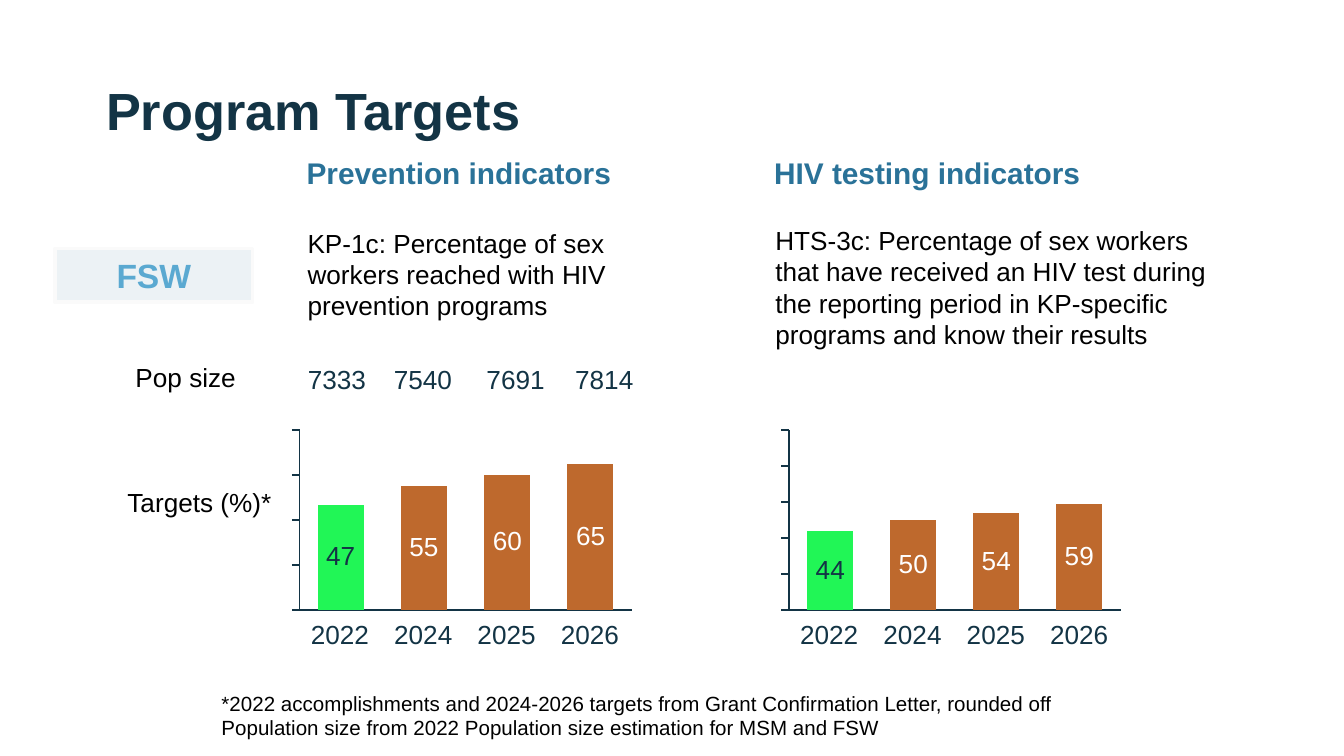
"""Build the Program Targets slide with its two column charts."""
from lxml import etree
from pptx import Presentation
from pptx.chart.data import CategoryChartData
from pptx.dml.color import RGBColor
from pptx.enum.chart import XL_CHART_TYPE as ChartType
from pptx.enum.chart import XL_LABEL_POSITION as LabelPosition
from pptx.enum.chart import XL_TICK_LABEL_POSITION as TickLabels
from pptx.enum.chart import XL_TICK_MARK as TickMark
from pptx.enum.shapes import MSO_SHAPE as Shape
from pptx.enum.text import MSO_ANCHOR as Anchor
from pptx.enum.text import PP_ALIGN as Align
from pptx.oxml import parse_xml
from pptx.oxml.ns import nsdecls, qn
from pptx.util import Inches, Pt

COLORS = {
    "navy": "133445", "heading": "2A7298", "text": "000000", "white": "FFFFFF",
    "group": "5AA9D1", "panel": "ECF2F5", "edge": "FAFAFA",
    "bar": "BE692D", "baseline": "21F656",
}
YEARS = ["2022", "2024", "2025", "2026"]
BAR_STEP = 0.62


def style_font(font, size, color, bold=False):
    font.name = "Arial"
    font.size = Pt(size)
    font.bold = bold
    font.color.rgb = RGBColor.from_string(COLORS[color])


def write(frame, lines, size, color, bold=False, align=Align.LEFT, tight=False):
    frame.word_wrap = not tight
    if tight:
        frame.margin_left = frame.margin_right = 0
        frame.margin_top = frame.margin_bottom = 0
    for index, line in enumerate(lines):
        para = frame.add_paragraph() if index else frame.paragraphs[0]
        para.alignment = align
        span = para.add_run()
        span.text = line
        style_font(span.font, size, color, bold)


deck = Presentation()
deck.slide_width = Inches(10)
deck.slide_height = Inches(10) * 9 // 16
page = deck.slides.add_slide(deck.slide_layouts[5])

title = page.shapes.title
title.left, title.top, title.width, title.height = [Inches(n) for n in (0.69, 0.3, 8.62, 1.09)]
write(title.text_frame, ["Program Targets"], 28, "navy", True)
title.text_frame.vertical_anchor = Anchor.MIDDLE
title.text_frame.paragraphs[0].line_spacing = 0.9

for left, width, heading in [
    (1.63, 3.57, "Prevention indicators"),
    (5.46, 2.88, "HIV testing indicators"),
]:
    box = page.shapes.add_textbox(Inches(left), Inches(1.1), Inches(width), Inches(0.37))
    write(box.text_frame, [heading], 16, "heading", True, Align.CENTER)

for left, top, width, height, size, lines in [
    (2.19, 1.64, 2.73, 0.81, 14,
     ["KP-1c: Percentage of sex workers reached with HIV prevention programs"]),
    (5.67, 1.62, 3.45, 1.04, 14,
     ["HTS-3c: Percentage of sex workers that have received an HIV test during "
      "the reporting period in KP-specific programs and know their results"]),
    (0.91, 2.64, 1.06, 0.34, 14, ["Pop size"]),
    (0.85, 3.57, 1.33, 0.34, 14, ["Targets (%)*"]),
    (1.55, 5.09, 7.53, 0.47, 11,
     ["*2022 accomplishments and 2024-2026 targets from Grant Confirmation Letter, rounded off",
      "Population size from 2022 Population size estimation for MSM and FSW"]),
]:
    box = page.shapes.add_textbox(Inches(left), Inches(top), Inches(width), Inches(height))
    write(box.text_frame, lines, size, "text")

group = page.shapes.add_shape(
    Shape.RECTANGLE, Inches(0.41), Inches(1.85), Inches(1.47), Inches(0.4))
group.shadow.inherit = False
group.fill.solid()
group.fill.fore_color.rgb = RGBColor.from_string(COLORS["panel"])
group.line.color.rgb = RGBColor.from_string(COLORS["edge"])
group.line.width = Pt(2)
write(group.text_frame, ["FSW"], 18, "group", True, Align.CENTER)

table = page.shapes.add_table(
    1, 4, Inches(2.19), Inches(2.67), Inches(2.65), Inches(0.41)).table
table.first_row = table.horz_banding = False
for index, (width, size) in enumerate(
        zip([0.64, 0.69, 0.66, 0.66], ["7333", "7540", "7691", "7814"])):
    table.columns[index].width = Inches(width)
    cell = table.cell(0, index)
    cell.fill.background()
    write(cell.text_frame, [size], 14, "navy")

for left, values, maximum, major, labelled in [
    (2.14, [72, 85, 92, 100], 123, 30.75, False),
    (5.78, [44, 50, 54, 59], 100, 20, True),
]:
    data = CategoryChartData()
    data.categories = ["1", "2", "3", "4"]
    data.add_series("Series 1", values)
    chart = page.shapes.add_chart(
        ChartType.COLUMN_STACKED, Inches(left), Inches(3.11), Inches(2.65), Inches(1.52),
        data).chart
    chart.has_legend = chart.has_title = False
    style_font(chart.font, 10, "navy")

    for axis, tick in [(chart.category_axis, TickMark.NONE), (chart.value_axis, TickMark.OUTSIDE)]:
        axis.has_major_gridlines = False
        axis.major_tick_mark = tick
        axis.minor_tick_mark = TickMark.NONE
        axis.tick_label_position = TickLabels.NONE
        axis.format.line.color.rgb = RGBColor.from_string(COLORS["navy"])
        axis.format.line.width = Pt(0.75)
    chart.value_axis.minimum_scale = 0
    chart.value_axis.maximum_scale = maximum
    chart.value_axis.major_unit = major

    plot = chart.plots[0]
    plot.gap_width, plot.overlap, plot.vary_by_categories = 80, 100, False
    bars = plot.series[0]
    for target, color in [(bars, "bar"), (bars.points[0], "baseline")]:
        target.format.fill.solid()
        target.format.fill.fore_color.rgb = RGBColor.from_string(COLORS[color])
    if labelled:
        labels = bars.data_labels
        labels.show_value = True
        labels.position = LabelPosition.CENTER
        style_font(labels.font, 14, "white")
        first = bars.points[0].data_label
        style_font(first.font, 14, "navy")
        first.position = LabelPosition.CENTER

    area = chart.element.find(f".//{qn('c:plotArea')}")
    for old in area.findall(qn("c:layout")):
        area.remove(old)
    layout = parse_xml(f"<c:layout {nsdecls('c')}/>")
    manual = etree.SubElement(layout, qn("c:manualLayout"))
    for tag, value in [
        ("layoutTarget", "inner"), ("xMode", "edge"), ("yMode", "edge"),
        ("x", "0.034"), ("y", "0.059"), ("w", "0.932"), ("h", "0.881"),
    ]:
        etree.SubElement(manual, qn(f"c:{tag}")).set("val", value)
    area.insert(0, layout)

    for index, year in enumerate(YEARS):
        box = page.shapes.add_textbox(
            Inches(left + 0.17 + index * BAR_STEP), Inches(4.6), Inches(0.44), Inches(0.23))
        write(box.text_frame, [year], 14, "navy", align=Align.CENTER, tight=True)

for index, (target, top) in enumerate(
        [("47", 4.04), ("55", 3.97), ("60", 3.93), ("65", 3.89)]):
    box = page.shapes.add_textbox(
        Inches(2.4 + index * BAR_STEP), Inches(top), Inches(0.27), Inches(0.21))
    write(box.text_frame, [target], 14, "white" if index else "navy",
          align=Align.CENTER, tight=True)
    box.text_frame.vertical_anchor = Anchor.MIDDLE
    box.text_frame.paragraphs[0].line_spacing = 0.9

deck.save("out.pptx")
